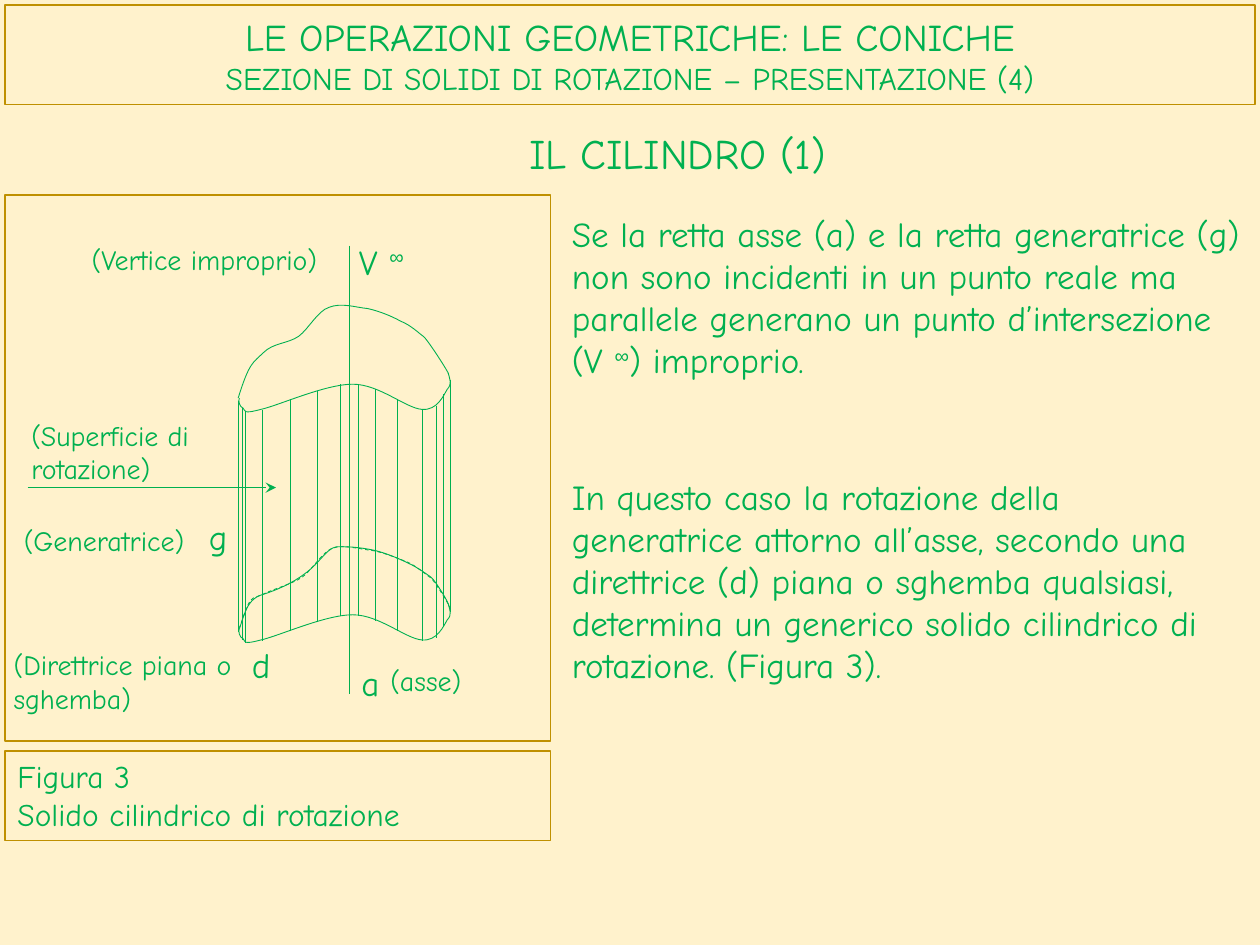
import pptx
import pptx.dml.color
import pptx.enum.dml
import pptx.enum.shapes
import pptx.enum.text
import pptx.oxml
import pptx.oxml.ns
import pptx.util
from dataclasses import dataclass
from pptx.util import Inches

RGB = pptx.dml.color.RGBColor.from_string
ANCHOR = pptx.enum.text.MSO_ANCHOR
NS = pptx.oxml.ns.nsdecls("a")


@dataclass(frozen=True)
class Theme:
    paper = RGB("FFF2CC")
    green = RGB("00B050")
    gold = RGB("BF9000")
    font = "Comic Neue"
    symbol_font = "Arial"
    title = 21.6
    heading = 24
    body = 20
    caption = 18
    label = 16
    thin = 0.25
    outline = 0.5
    frame = 0.75


theme = Theme()

presentation = pptx.Presentation()
presentation.slide_width, presentation.slide_height = Inches(10), Inches(7.5)
slide = presentation.slides.add_slide(presentation.slide_layouts[5])
slide.background.fill.solid()
slide.background.fill.fore_color.rgb = theme.paper


def add_text(box, text, size, anchor=ANCHOR.TOP, wrap=True):
    """Add a green text box; every ∞ becomes a superscript."""
    holder = slide.shapes.add_textbox(*map(Inches, box))
    frame = holder.text_frame
    frame.word_wrap = wrap
    frame.vertical_anchor = anchor
    frame.auto_size = pptx.enum.text.MSO_AUTO_SIZE.SHAPE_TO_FIT_TEXT
    for index, line in enumerate(text.split("\n")):
        paragraph = frame.paragraphs[0] if index == 0 else frame.add_paragraph()
        paragraph.font.size = pptx.util.Pt(size)
        paragraph.font.name = theme.font
        paragraph.font.color.rgb = theme.green
        for piece in filter(None, line.replace("∞", "|∞|").split("|")):
            run = paragraph.add_run()
            run.text = piece
            if piece == "∞":
                run.font.name = theme.symbol_font
                run._r.get_or_add_rPr().set("baseline", "30000")
    return holder


def add_line(start, end, width):
    """Add a green straight line without shadow."""
    line = slide.shapes.add_connector(
        pptx.enum.shapes.MSO_CONNECTOR.STRAIGHT, *map(Inches, start + end))
    line.line.color.rgb = theme.green
    line.line.width = pptx.util.Pt(width)
    line._element.spPr.append(pptx.oxml.parse_xml(f"<a:effectLst {NS}/>"))
    return line


# Title band
title = slide.shapes.title
title.left, title.top, title.width, title.height = map(Inches, (0.04, 0.04, 9.92, 0.79))
title.line.color.rgb = theme.gold
title.line.width = pptx.util.Pt(theme.frame)
title.text_frame.auto_size = pptx.enum.text.MSO_AUTO_SIZE.NONE
title.text_frame.vertical_anchor = ANCHOR.MIDDLE
title_line = title.text_frame.paragraphs[0]
title_line.alignment = pptx.enum.text.PP_ALIGN.CENTER
title_line.font.name = theme.font
title_line.font.color.rgb = theme.green
main_title = title_line.add_run()
main_title.text = "LE OPERAZIONI GEOMETRICHE: LE CONICHE"
main_title.font.size = pptx.util.Pt(theme.title)
title_line.add_line_break()
subtitle = title_line.add_run()
subtitle.text = "SEZIONE DI SOLIDI DI ROTAZIONE – PRESENTAZIONE (4)"
subtitle.font.size = pptx.util.Pt(theme.caption)

add_text((4.1, 0.96, 2.91, 0.5), "IL CILINDRO (1)", theme.heading, ANCHOR.MIDDLE)

# Figure frame
figure = slide.shapes.add_shape(
    pptx.enum.shapes.MSO_SHAPE.RECTANGLE, *map(Inches, (0.04, 1.55, 4.33, 4.33)))
figure.shadow.inherit = False
figure.fill.background()
figure.line.color.rgb = theme.gold
figure.line.width = pptx.util.Pt(1)

# Generatrices: x and upper end, all of one height
cylinder_height = 1.84
generatrices = [
    (1.89, 3.18), (1.92, 3.24), (1.95, 3.26), (2.08, 3.25), (2.3, 3.17),
    (2.52, 3.1), (2.7, 3.05), (2.84, 3.05), (2.98, 3.09), (3.15, 3.17),
    (3.35, 3.25), (3.46, 3.22), (3.52, 3.13), (3.57, 3.02),
]
for x, top in generatrices:
    add_line((x, top), (x, top + cylinder_height), theme.thin)

# Axis
add_line((2.77, 1.95), (2.77, 5.51), theme.outline)

# Directrices: a start point, then three Bezier points per curve
front_edge = [
    (1.9, 3.16), (1.89, 3.18), (1.9, 3.23), (1.93, 3.24), (1.95, 3.26),
    (1.92, 3.29), (2.07, 3.25), (2.21, 3.22), (2.58, 3.05), (2.8, 3.05),
    (3.01, 3.05), (3.22, 3.24), (3.35, 3.25), (3.47, 3.26), (3.52, 3.14),
    (3.55, 3.09), (3.59, 3.05), (3.57, 3.01), (3.56, 2.97), (3.55, 2.93),
    (3.58, 3.04), (3.57, 3.02),
]
top_back = [
    (1.89, 3.16), (1.98, 2.87), (2.01, 2.88), (2.09, 2.8), (2.17, 2.72),
    (2.28, 2.73), (2.37, 2.67), (2.45, 2.61), (2.52, 2.47), (2.61, 2.44),
    (2.71, 2.4), (2.82, 2.44), (2.92, 2.45), (3.01, 2.47), (3.11, 2.51),
    (3.18, 2.55), (3.26, 2.58), (3.33, 2.65), (3.36, 2.67), (3.39, 2.69),
    (3.57, 2.97), (3.56, 2.97),
]
base_back = [
    (1.9, 4.98), (1.93, 4.94), (1.94, 4.76), (2.08, 4.72), (2.21, 4.68),
    (2.33, 4.62), (2.41, 4.56), (2.5, 4.5), (2.56, 4.41), (2.61, 4.37),
    (2.66, 4.33), (2.68, 4.34), (2.74, 4.34), (2.8, 4.34), (2.89, 4.35),
    (2.98, 4.37), (3.06, 4.39), (3.16, 4.43), (3.24, 4.47), (3.31, 4.5),
    (3.39, 4.56), (3.42, 4.58), (3.45, 4.6), (3.58, 4.81), (3.56, 4.81),
]
base_hidden = [
    (1.9, 4.99), (1.99, 4.71), (1.99, 4.76), (2.08, 4.72), (2.18, 4.67),
    (2.31, 4.64), (2.4, 4.58), (2.49, 4.51), (2.55, 4.39), (2.64, 4.35),
    (2.73, 4.32), (2.86, 4.36), (2.96, 4.37), (3.06, 4.39), (3.15, 4.43),
    (3.23, 4.46), (3.3, 4.49), (3.38, 4.56), (3.41, 4.58), (3.44, 4.59),
    (3.59, 4.84), (3.57, 4.83),
]
base_front = [(x, y + 1.83) for x, y in front_edge]
for points in (base_back, base_front, base_hidden, top_back, front_edge):
    start, *controls = [(Inches(x), Inches(y)) for x, y in points]
    builder = slide.shapes.build_freeform(*start)
    builder.add_line_segments(controls, close=False)
    directrix = builder.convert_to_shape()
    # Turn each three straight segments into one Bezier curve
    segments = directrix._element.xpath(".//a:lnTo")
    for first in range(0, len(segments), 3):
        curve = pptx.oxml.parse_xml(f"<a:cubicBezTo {NS}/>")
        segments[first].addprevious(curve)
        for segment in segments[first:first + 3]:
            curve.append(segment[0])
            segment.getparent().remove(segment)
    directrix.shadow.inherit = False
    directrix.fill.background()
    directrix.line.color.rgb = theme.green
    directrix.line.width = pptx.util.Pt(theme.outline)
    if points is base_hidden:
        directrix.line.dash_style = pptx.enum.dml.MSO_LINE.DASH

# Arrow to the surface
surface_arrow = add_line((0.22, 3.87), (2.19, 3.87), theme.outline)
surface_arrow.line._get_or_add_ln().append(
    pptx.oxml.parse_xml(f'<a:tailEnd {NS} type="stealth"/>'))

# Figure letters
for box, letter in [
    ((2.75, 1.86, 0.69, 0.44), "V ∞"),
    ((1.56, 4.04, 0.35, 0.44), "g"),
    ((2.77, 5.2, 0.35, 0.44), "a"),
    ((1.9, 5.06, 0.37, 0.44), "d"),
]:
    add_text(box, letter, theme.body, wrap=False)

# Figure labels
for box, label, anchor in [
    ((0.63, 1.87, 2.2, 0.37), "(Vertice improprio)", ANCHOR.MIDDLE),
    ((0.15, 3.27, 1.55, 0.64), "(Superficie di rotazione)", ANCHOR.TOP),
    ((0.09, 4.13, 1.61, 0.31), "(Generatrice)", ANCHOR.MIDDLE),
    ((0.01, 5.09, 2.05, 0.64), "(Direttrice piana o sghemba)", ANCHOR.TOP),
    ((3, 5.22, 0.83, 0.37), "(asse)", ANCHOR.TOP),
]:
    add_text(box, label, theme.label, anchor)

# Caption
caption = add_text((0.04, 5.96, 4.33, 0.71),
                   "Figura 3\nSolido cilindrico di rotazione", theme.caption)
caption.line.color.rgb = theme.gold
caption.line.width = pptx.util.Pt(theme.frame)

# Explanation
for box, explanation in [
    ((4.44, 1.63, 5.51, 1.45),
     "Se la retta asse (a) e la retta generatrice (g) non sono incidenti in un punto "
     "reale ma parallele generano un punto d’intersezione (V ∞) improprio."),
    ((4.44, 3.72, 5.51, 1.78),
     "In questo caso la rotazione della generatrice attorno all’asse, secondo una "
     "direttrice (d) piana o sghemba qualsiasi, determina un generico solido "
     "cilindrico di rotazione. (Figura 3)."),
]:
    add_text(box, explanation, theme.body, ANCHOR.MIDDLE)

presentation.save("out.pptx")
